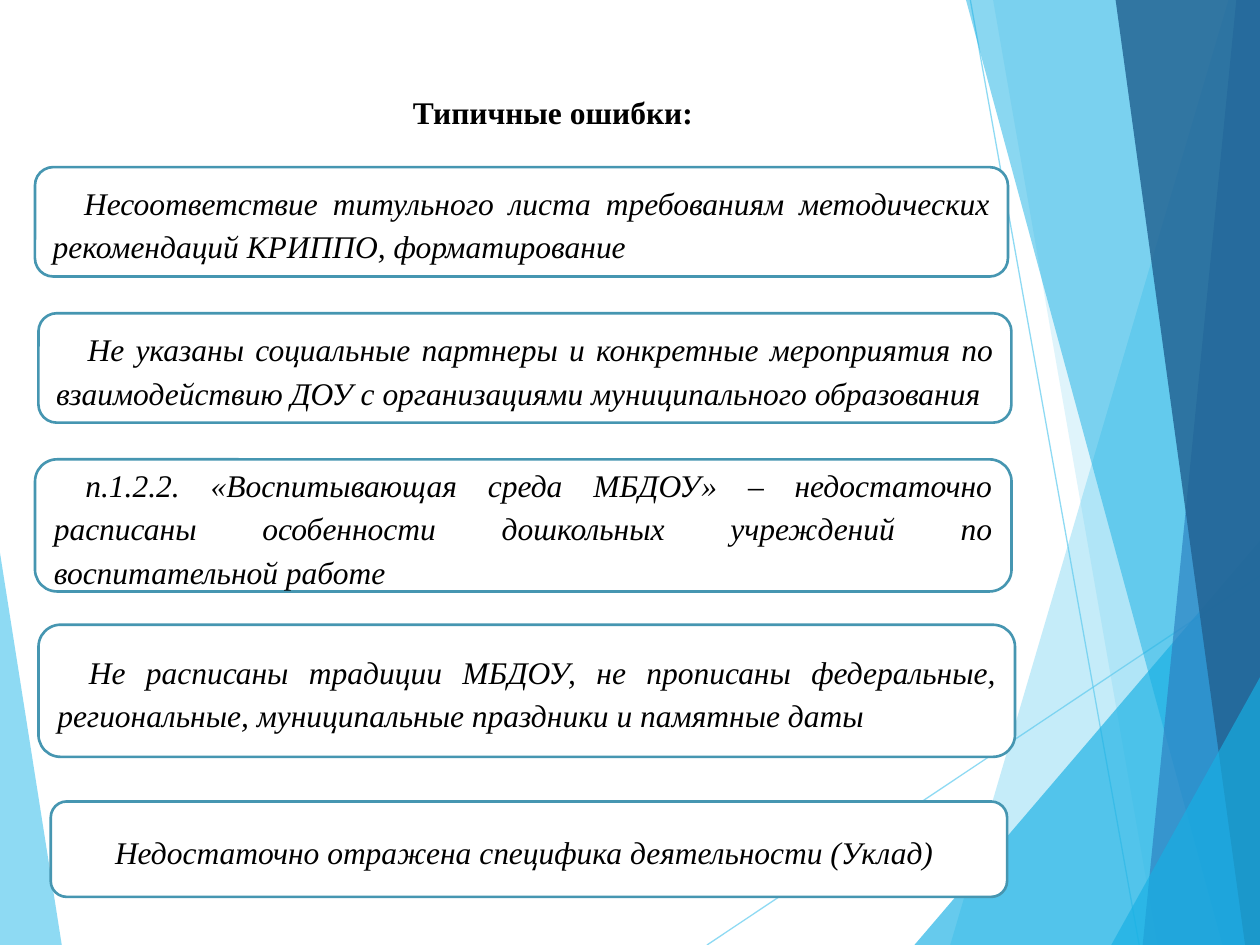
from lxml import etree
from pptx import Presentation
from pptx import util as u
from pptx.dml.color import RGBColor
from pptx.enum import shapes, text
from pptx.oxml.ns import qn

COLORS = {
    "sky": "5FCBEF", "cyan": "17B0E4", "blue": "2E83C3", "navy": "226292",
    "border": "4696B1", "white": "FFFFFF", "black": "000000",
}
W, H = 720, 540

# colour, opacity in percent, corner points
BACK_FACETS = [("sky", 70, [(0, 316), (35.3, H), (0, H)])]
RAYS = [((404, H), (W, 329)), ((554.5, 0), (651, H))]
FRONT_FACETS = [
    ("sky", 36, [(702, 0), (543, H), (W, H), (W, 0)]),
    ("sky", 20, [(567.5, 0), (661.5, H), (W, H), (W, 0)]),
    ("cyan", 66, [(522.5, H), (W, 309), (W, H)]),
    ("cyan", 50, [(552, 0), (698.5, H), (W, H), (W, 0)]),
    ("blue", 70, [(706.5, 0), (653, H), (W, H), (W, 0)]),
    ("navy", 82, [(637.5, 0), (711.5, H), (W, H), (W, 0)]),
    ("cyan", 66, [(635, H), (W, 387), (W, H)]),
]

# left, top, width, height, left margin, first-line indent, wording
MISTAKES = [
    (20, 95.5, 556, 62.5, 0, 18,
     "Несоответствие титульного листа требованиям методических "
     "рекомендаций КРИППО, форматирование"),
    (22, 179, 556, 62.5, 0, 18,
     "Не указаны социальные партнеры и конкретные мероприятия по "
     "взаимодействию ДОУ с организациями муниципального образования"),
    (20, 262.5, 558, 75.5, 0, 18,
     "п.1.2.2. «Воспитывающая среда МБДОУ» – недостаточно расписаны "
     "особенности дошкольных учреждений по воспитательной работе"),
    (22, 357, 558, 75.5, 0, 18,
     "Не расписаны традиции МБДОУ, не прописаны федеральные, "
     "региональные, муниципальные праздники и памятные даты"),
    (29, 458, 546.5, 54.5, 27, 0,
     "Недостаточно отражена специфика деятельности (Уклад)"),
]


class Deck:
    """Holds the presentation style and the current slide."""

    font = "Times New Roman"
    size = 18

    def __init__(self):
        self.prs = Presentation()
        self.prs.slide_width, self.prs.slide_height = u.Pt(W), u.Pt(H)
        self.slide = self.prs.slides.add_slide(self.prs.slide_layouts[5])

    @staticmethod
    def color(name):
        return RGBColor.from_string(COLORS[name])

    @staticmethod
    def set_opacity(element, percent):
        clr = next(element.iter(qn("a:srgbClr")))
        etree.SubElement(clr, qn("a:alpha")).set("val", str(percent * 1000))

    def set_text(self, sp, wording, align, spacing, margin=0, indent=0,
                 bold=False, italic=False):
        tf = sp.text_frame
        tf.text = wording
        tf.word_wrap = True
        p = tf.paragraphs[0]
        p.alignment = align
        p.line_spacing = spacing
        pPr = p._p.get_or_add_pPr()
        pPr.set("marL", str(u.Pt(margin)))
        pPr.set("indent", str(u.Pt(indent)))
        font = p.runs[0].font
        font.name, font.size = self.font, u.Pt(self.size)
        font.bold, font.italic = bold, italic
        font.color.rgb = self.color("black")
        return tf

    def facet(self, color, opacity, points):
        """Draw a translucent polygon."""
        (x, y), *rest = [(u.Pt(px), u.Pt(py)) for px, py in points]
        builder = self.slide.shapes.build_freeform(x, y)
        builder.add_line_segments(rest, close=True)
        sp = builder.convert_to_shape()
        sp.shadow.inherit = False
        sp.fill.solid()
        sp.fill.fore_color.rgb = self.color(color)
        sp.line.fill.background()
        self.set_opacity(sp._element.spPr, opacity)

    def ray(self, start, end):
        """Draw a thin translucent line."""
        cn = self.slide.shapes.add_connector(
            shapes.MSO_CONNECTOR.STRAIGHT, *map(u.Pt, start + end))
        cn.line.color.rgb = self.color("sky")
        cn.line.width = u.Pt(0.75)
        spPr = cn._element.spPr
        self.set_opacity(spPr, 70)
        etree.SubElement(spPr, qn("a:effectLst"))

    def title(self, wording):
        sp = self.slide.shapes.title
        sp.left, sp.top = u.Pt(48), u.Pt(48)
        sp.width, sp.height = u.Pt(500), u.Pt(104)
        tf = self.set_text(sp, wording, text.PP_ALIGN.CENTER, 1.07,
                           margin=36, bold=True)
        tf.vertical_anchor = text.MSO_ANCHOR.TOP
        tf.paragraphs[0].space_after = u.Pt(8)

    def card(self, left, top, width, height, margin, indent, wording):
        sp = self.slide.shapes.add_shape(
            shapes.MSO_SHAPE.ROUNDED_RECTANGLE,
            *map(u.Pt, (left, top, width, height)))
        sp.shadow.inherit = False
        sp.fill.solid()
        sp.fill.fore_color.rgb = self.color("white")
        sp.line.color.rgb = self.color("border")
        sp.line.width = u.Pt(1.5)
        tf = self.set_text(sp, wording, text.PP_ALIGN.JUSTIFY, 1.15, margin,
                           indent, italic=True)
        tf.vertical_anchor = text.MSO_ANCHOR.MIDDLE


def main():
    deck = Deck()
    for facet in BACK_FACETS:
        deck.facet(*facet)
    for ray in RAYS:
        deck.ray(*ray)
    for facet in FRONT_FACETS:
        deck.facet(*facet)
    deck.title("Типичные ошибки:")
    for mistake in MISTAKES:
        deck.card(*mistake)
    deck.prs.save("out.pptx")


if __name__ == "__main__":
    main()
